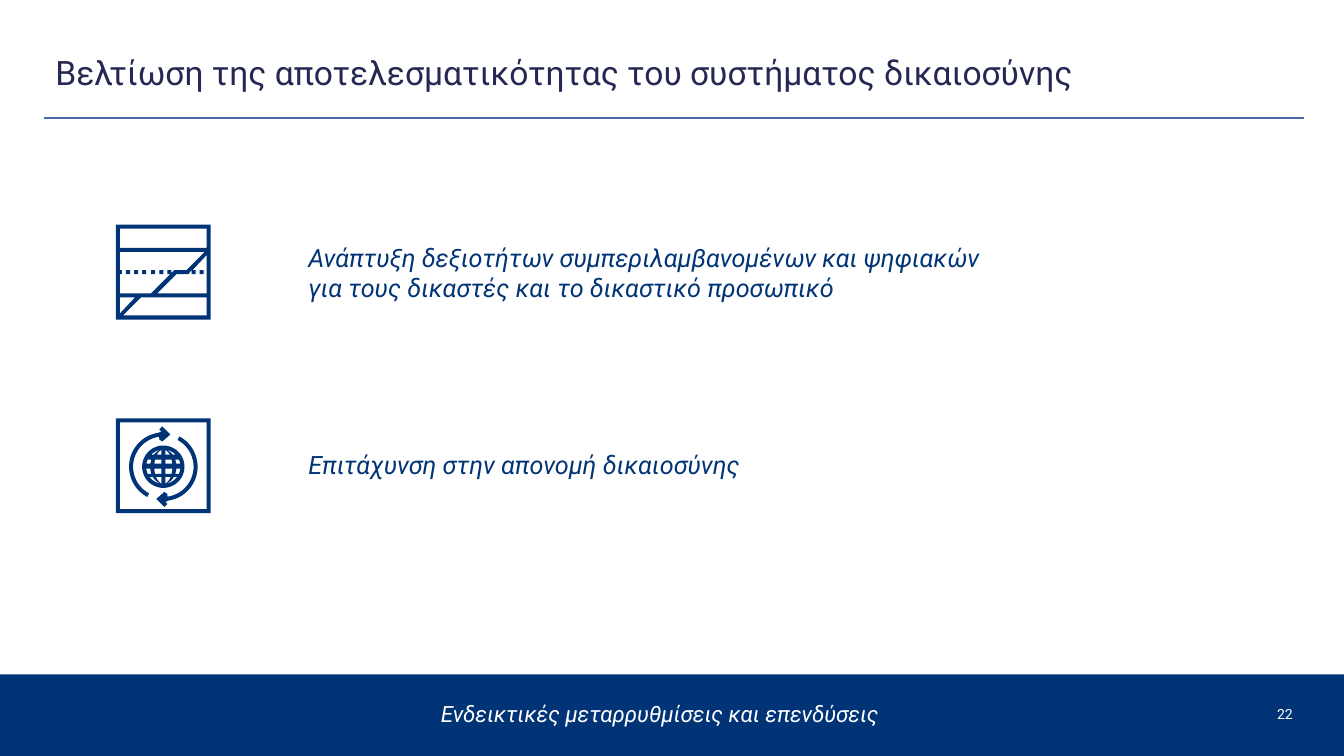
from dataclasses import dataclass
from math import cos, radians, sin, sqrt

from lxml import etree
from pptx import Presentation
from pptx import util as u
from pptx.dml.color import RGBColor
from pptx.enum import shapes, text
from pptx.oxml import ns

COLORS = {"navy": "013476", "rule": "4A66AC", "title": "242852", "white": "FFFFFF"}
FONT = "Roboto"
ICON_LEFT, ICON_SIZE, ICON_BORDER = 1.15, 0.94, 0.04
CHART_ICON_TOP, GLOBE_ICON_TOP = 2.23, 4.15
GLOBE_X, GLOBE_Y = 1.62, 4.63
GLOBE_RADIUS, GLOBE_INNER = 0.21, 0.17
GLOBE_ROWS = [(-0.17, -0.12), (-0.07, -0.03), (0.02, 0.07), (0.1, 0.17)]
ARROW_INNER, ARROW_OUTER = 0.3, 0.34
ARROW_HEAD = [(-0.04, -0.27), (-0.01, -0.25), (0.07, -0.32),
              (-0.01, -0.4), (-0.04, -0.37), (-0.02, -0.35)]

Point = tuple[float, float]
Contour = list[Point]


@dataclass
class Label:
    """A line of text with its box and formatting."""
    words: str
    left: float
    top: float
    width: float
    height: float
    size: int
    color: str = "navy"
    italic: bool = True
    align: text.PP_ALIGN = text.PP_ALIGN.LEFT
    anchor: text.MSO_ANCHOR = text.MSO_ANCHOR.TOP
    margin: float = 0.05
    fit: text.MSO_AUTO_SIZE = text.MSO_AUTO_SIZE.SHAPE_TO_FIT_TEXT


TITLE = Label("Βελτίωση της αποτελεσματικότητας του συστήματος δικαιοσύνης",
              0.45, 0.46, 12.42, 0.84, 24, "title", italic=False, margin=0.1,
              fit=text.MSO_AUTO_SIZE.NONE)
LABELS = [
    Label("22", 12.35, 6.8, 0.57, 0.57, 10, "white", False, text.PP_ALIGN.RIGHT,
          text.MSO_ANCHOR.MIDDLE, 0.1, text.MSO_AUTO_SIZE.NONE),
    Label("Ανάπτυξη δεξιοτήτων συμπεριλαμβανομένων και ψηφιακών "
          "για τους δικαστές και το δικαστικό προσωπικό", 2.96, 2.35, 7.06, 0.71, 18),
    Label("Επιτάχυνση στην απονομή δικαιοσύνης", 2.96, 4.41, 6.67, 0.4, 18),
    Label("Ενδεικτικές μεταρρυθμίσεις και επενδύσεις", 3.95, 6.9, 5.19, 0.37, 16,
          "white", align=text.PP_ALIGN.CENTER),
]
CHART_HOLES: list[Contour] = [
    [(2.05, 2.91), (1.56, 2.91), (1.75, 2.72), (1.87, 2.72), (1.9, 2.68), (1.9, 2.72),
     (1.94, 2.72), (1.94, 2.68), (1.91, 2.68), (2.05, 2.53)],
    [(1.19, 2.95), (1.34, 2.95), (1.19, 3.11)],
    [(1.19, 2.91), (1.19, 2.72), (1.21, 2.72), (1.21, 2.68), (1.19, 2.68), (1.19, 2.5),
     (2.03, 2.5), (1.85, 2.68), (1.73, 2.68), (1.7, 2.71), (1.7, 2.68), (1.66, 2.68),
     (1.66, 2.72), (1.69, 2.72), (1.5, 2.91)],
    [(1.22, 3.13), (1.4, 2.95), (2.05, 2.95), (2.05, 3.13)],
]
DASH_LEFTS = [1.25, 1.33, 1.41, 1.5, 1.58, 1.98]


def color(name: str) -> RGBColor:
    """Return a named colour."""
    return RGBColor.from_string(COLORS[name])


def box(left: float, top: float, width: float, height: float) -> Contour:
    """Return the corners of a rectangle."""
    right, bottom = left + width, top + height
    return [(left, top), (left, bottom), (right, bottom), (right, top)]


def arc(radius: float, start: int, end: int, step: int = 6) -> Contour:
    """Return points on a circle around the origin."""
    return [(radius * cos(radians(angle)), radius * sin(radians(angle)))
            for angle in range(start, end, step)]


def around_globe(contour: Contour, x_sign: int = 1, y_sign: int = 1) -> Contour:
    """Mirror a contour and centre it on the globe."""
    return [(GLOBE_X + x_sign * x, GLOBE_Y + y_sign * y) for x, y in contour]


def globe_cell(inner: float, outer: float, top: float, bottom: float) -> Contour:
    """Return one opening between two meridians and two parallels."""
    heights = [top + (bottom - top) * step / 8 for step in range(9)]
    bulges = [sqrt(max(0, 1 - (y / GLOBE_INNER) ** 2)) for y in heights]
    axis = 0.02
    near = [(max(axis, inner * bulge), y) for bulge, y in zip(bulges, heights)]
    far = [(max(axis, outer * bulge), y) for bulge, y in zip(bulges, heights)]
    return near + far[::-1]


def paint(shape, name: str) -> None:
    """Give a shape a plain fill without line or shadow."""
    shape.shadow.inherit = False
    shape.fill.solid()
    shape.fill.fore_color.rgb = color(name)
    shape.line.fill.background()


def draw_outline(parent, contours: list[Contour]) -> None:
    """Draw contours as one navy freeform with openings."""
    builder = None
    for contour in contours:
        points = [(u.Inches(x), u.Inches(y)) for x, y in contour]
        if builder is None:
            builder = parent.build_freeform(*points[0])
        else:
            builder.move_to(*points[0])
        builder.add_line_segments(points[1:], close=True)
    paint(builder.convert_to_shape(), "navy")


def write(shape, label: Label) -> None:
    """Place a text shape and format its words."""
    shape.left, shape.top = u.Inches(label.left), u.Inches(label.top)
    shape.width, shape.height = u.Inches(label.width), u.Inches(label.height)
    frame = shape.text_frame
    frame.text = label.words
    frame.word_wrap = True
    frame.auto_size = label.fit
    frame.vertical_anchor = label.anchor
    frame.margin_left = frame.margin_right = u.Inches(0.1)
    frame.margin_top = frame.margin_bottom = u.Inches(label.margin)
    paragraph = frame.paragraphs[0]
    paragraph.alignment = label.align
    font = paragraph.runs[0].font
    font.name, font.size, font.italic = FONT, u.Pt(label.size), label.italic
    font.color.rgb = color(label.color)


def draw_chart_icon(slide) -> None:
    """Draw the rising line chart icon."""
    band = box(ICON_LEFT + ICON_BORDER, CHART_ICON_TOP + ICON_BORDER, 0.86, 0.19)
    dashes = [box(left, 2.68, 0.04, 0.04) for left in DASH_LEFTS]
    frame = box(ICON_LEFT, CHART_ICON_TOP, ICON_SIZE, ICON_SIZE)
    draw_outline(slide.shapes, [frame, band, *CHART_HOLES, *dashes])


def draw_globe_icon(slide) -> None:
    """Draw the framed globe with two circling arrows."""
    group = slide.shapes.add_group_shape().shapes
    opening = ICON_SIZE - 2 * ICON_BORDER
    draw_outline(group, [
        box(ICON_LEFT, GLOBE_ICON_TOP, ICON_SIZE, ICON_SIZE),
        box(ICON_LEFT + ICON_BORDER, GLOBE_ICON_TOP + ICON_BORDER, opening, opening)])
    arrow = arc(ARROW_INNER, 118, 267) + ARROW_HEAD + arc(ARROW_OUTER, 118, 267)[::-1]
    for sign in (1, -1):
        draw_outline(group, [around_globe(arrow, sign, sign)])
    cells = [around_globe(globe_cell(inner, outer, top, bottom), side)
             for side in (1, -1)
             for inner, outer in ((0, 0.09), (0.13, GLOBE_INNER))
             for top, bottom in GLOBE_ROWS]
    draw_outline(group, [around_globe(arc(GLOBE_RADIUS, 0, 360)), *cells])


def main() -> None:
    """Build and save the slide."""
    presentation = Presentation()
    presentation.slide_width, presentation.slide_height = u.Inches(13.33), u.Inches(7.5)
    slide = presentation.slides.add_slide(presentation.slide_layouts[5])
    footer = slide.shapes.add_shape(shapes.MSO_SHAPE.RECTANGLE, 0, u.Inches(6.69),
                                    presentation.slide_width, u.Inches(0.81))
    paint(footer, "navy")
    rule = slide.shapes.add_connector(shapes.MSO_CONNECTOR.STRAIGHT, u.Inches(0.44),
                                      u.Inches(1.17), u.Inches(12.93), u.Inches(1.17))
    rule.line.color.rgb = color("rule")
    rule.line.width = u.Pt(1)
    etree.SubElement(rule.element.spPr, ns.qn("a:effectLst"))
    write(slide.shapes.title, TITLE)
    slide.shapes.title.text_frame.paragraphs[0].line_spacing = 0.9
    draw_chart_icon(slide)
    draw_globe_icon(slide)
    for label in LABELS:
        write(slide.shapes.add_textbox(0, 0, 0, 0), label)
    presentation.save("out.pptx")


if __name__ == "__main__":
    main()
